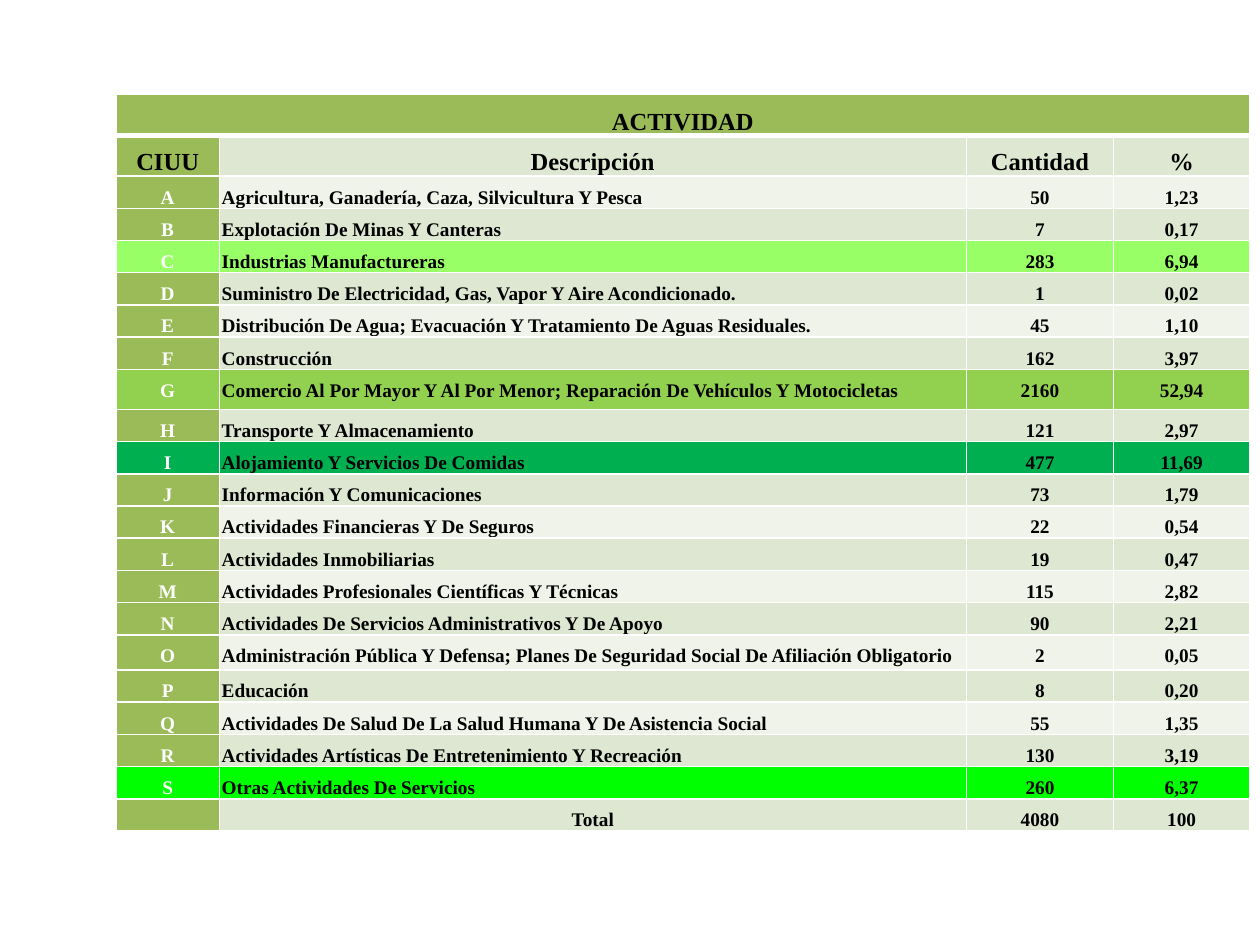
from lxml import etree
from pptx import Presentation
from pptx import util as u
from pptx.dml.color import RGBColor
from pptx.enum import text
from pptx.oxml import ns

THEME = {
    "font": "Times New Roman", "head_size": 14, "body_size": 11,
    "ink": "000000", "white": "FFFFFF", "accent": "9BBB59",
    "bands": ("EFF3EA", "DEE7D1"), "line": 1, "title_line": 3,
}
HIGHLIGHTS = {"C": "99FF66", "G": "92D050", "I": "00B050", "S": "00FF00"}
ROWS = [
    ("ACTIVIDAD", "", "", ""),
    ("CIUU", "Descripción", "Cantidad", "%"),
    ("A", "Agricultura, Ganadería, Caza, Silvicultura Y Pesca", "50", "1,23"),
    ("B", "Explotación De Minas Y Canteras", "7", "0,17"),
    ("C", "Industrias Manufactureras", "283", "6,94"),
    ("D", "Suministro De Electricidad, Gas, Vapor Y Aire Acondicionado.", "1", "0,02"),
    ("E", "Distribución De Agua; Evacuación Y Tratamiento De Aguas Residuales.", "45", "1,10"),
    ("F", "Construcción", "162", "3,97"),
    ("G", "Comercio Al Por Mayor Y Al Por Menor; Reparación De Vehículos Y Motocicletas", "2160", "52,94"),
    ("H", "Transporte Y Almacenamiento", "121", "2,97"),
    ("I", "Alojamiento Y Servicios De Comidas", "477", "11,69"),
    ("J", "Información Y Comunicaciones", "73", "1,79"),
    ("K", "Actividades Financieras Y De Seguros", "22", "0,54"),
    ("L", "Actividades Inmobiliarias", "19", "0,47"),
    ("M", "Actividades Profesionales Científicas Y Técnicas", "115", "2,82"),
    ("N", "Actividades De Servicios Administrativos Y De Apoyo", "90", "2,21"),
    ("O", "Administración Pública Y Defensa; Planes De Seguridad Social De Afiliación Obligatorio", "2", "0,05"),
    ("P", "Educación", "8", "0,20"),
    ("Q", "Actividades De Salud De La Salud Humana Y De Asistencia Social", "55", "1,35"),
    ("R", "Actividades Artísticas De Entretenimiento Y Recreación", "130", "3,19"),
    ("S", "Otras Actividades De Servicios", "260", "6,37"),
    ("", "Total", "4080", "100"),
]
COL_WIDTHS = (2.08, 15.06, 2.97, 2.74)
ROW_HEIGHT = 0.64
TALL_ROWS = {"G": 0.81, "O": 0.71}


def set_borders(cell, row):
    tc_pr = cell._tc.get_or_add_tcPr()
    title_edge = {0: "B", 1: "T"}.get(row)
    for side in "LRTB":
        width = THEME["title_line" if side == title_edge else "line"]
        ln = etree.SubElement(tc_pr, ns.qn(f"a:ln{side}"), w=str(u.Pt(width)))
        fill = etree.SubElement(ln, ns.qn("a:solidFill"))
        etree.SubElement(fill, ns.qn("a:srgbClr"), val=THEME["white"])


def fill_cell(cell, row, col, value, code):
    set_borders(cell, row)
    base = THEME["accent"] if row == 0 or col == 0 else THEME["bands"][row % 2]
    cell.fill.solid()
    cell.fill.fore_color.rgb = RGBColor.from_string(HIGHLIGHTS.get(code, base))
    cell.margin_left = cell.margin_right = u.Cm(0.05)
    cell.margin_top = cell.margin_bottom = 0
    is_head = row < 2
    is_description = col == 1 and not is_head and code
    p = cell.text_frame.paragraphs[0]
    p.text = value
    p.alignment = text.PP_ALIGN.LEFT if is_description else text.PP_ALIGN.CENTER
    p.line_spacing = 1.5 if value else 1.0
    p.font.name = THEME["font"]
    p.font.size = u.Pt(THEME["head_size" if is_head else "body_size"])
    p.font.bold = True
    ink = THEME["white" if col == 0 and not is_head else "ink"]
    p.font.color.rgb = RGBColor.from_string(ink)


def main():
    """Build the slide with the table of economic activities."""
    prs = Presentation()
    prs.slide_width, prs.slide_height = u.Cm(25.4), u.Cm(19.05)
    s = prs.slides.add_slide(prs.slide_layouts[6])
    heights = [TALL_ROWS.get(values[0], ROW_HEIGHT) for values in ROWS]
    table = s.shapes.add_table(
        len(ROWS), len(COL_WIDTHS), u.Cm(2.34), u.Cm(1.91),
        u.Cm(sum(COL_WIDTHS)), u.Cm(sum(heights))).table
    for column, width in zip(table.columns, COL_WIDTHS):
        column.width = u.Cm(width)
    for row, (values, height) in enumerate(zip(ROWS, heights)):
        table.rows[row].height = u.Cm(height)
        for col, value in enumerate(values):
            fill_cell(table.cell(row, col), row, col, value, values[0])
    table.cell(0, 0).merge(table.cell(0, len(COL_WIDTHS) - 1))
    prs.save("out.pptx")


if __name__ == "__main__":
    main()
